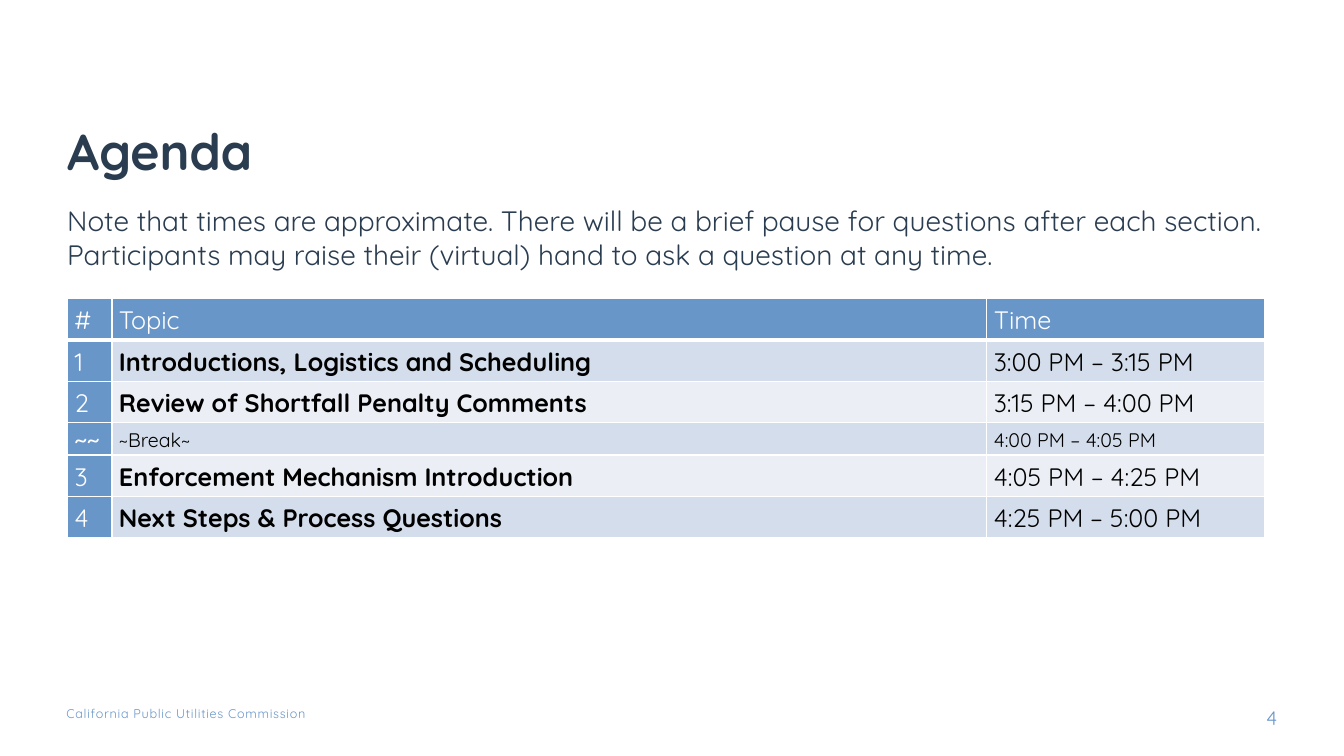
from dataclasses import dataclass

import lxml.etree
import pptx
import pptx.dml.color
import pptx.enum.text
import pptx.oxml.ns
import pptx.util

RGBColor = pptx.dml.color.RGBColor
Anchor = pptx.enum.text.MSO_ANCHOR
Align = pptx.enum.text.PP_ALIGN

NAVY = RGBColor(0x2A, 0x3C, 0x50)
BLUE = RGBColor(0x69, 0x96, 0xC9)
BAND_DARK = RGBColor(0xD4, 0xDD, 0xEB)
BAND_LIGHT = RGBColor(0xEB, 0xEF, 0xF5)
WHITE = RGBColor(0xFF, 0xFF, 0xFF)
BLACK = RGBColor(0x00, 0x00, 0x00)

FONT = "Quicksand"
SLIDE_WIDTH = pptx.util.Inches(13.333)
SLIDE_HEIGHT = pptx.util.Inches(7.5)

# Shares of the slide's width and height, in percent
COLUMN_SHARES = (3.3, 65.1, 20.7)
ROW_SHARE = 5.47
BREAK_ROW_SHARE = 3.2


@dataclass(frozen=True)
class Box:
    """A place on the slide, in percent of its width and height."""
    left: float
    top: float
    width: float
    height: float

    def lengths(self) -> tuple[int, int, int, int]:
        return (across(self.left), down(self.top),
                across(self.width), down(self.height))


@dataclass(frozen=True)
class AgendaItem:
    number: str
    topic: str
    time: str
    is_break: bool = False


TITLE_BOX = Box(5, 5.33, 90, 19.33)
NOTE_BOX = Box(5, 26.27, 90.9, 11.33)
TABLE_BOX = Box(5.03, 39.5, sum(COLUMN_SHARES), 31.33)
FOOTER_BOX = Box(4.95, 93.33, 24.1, 2)
NUMBER_BOX = Box(91.88, 93.33, 3.15, 2.67)

NOTE = ("Note that times are approximate. There will be a brief pause for "
        "questions after each section. Participants may raise their (virtual) "
        "hand to ask a question at any time.")
HEADINGS = ("#", "Topic", "Time")
AGENDA = (
    AgendaItem("1", "Introductions, Logistics and Scheduling", "3:00 PM – 3:15 PM"),
    AgendaItem("2", "Review of Shortfall Penalty Comments", "3:15 PM – 4:00 PM"),
    AgendaItem("~~", "~Break~", "4:00 PM – 4:05 PM", is_break=True),
    AgendaItem("3", "Enforcement Mechanism Introduction", "4:05 PM – 4:25 PM"),
    AgendaItem("4", "Next Steps & Process Questions", "4:25 PM – 5:00 PM"),
)


def across(percent: float) -> int:
    return round(SLIDE_WIDTH * percent / 100)


def down(percent: float) -> int:
    return round(SLIDE_HEIGHT * percent / 100)


def write(frame, text: str, *, size: float, color: RGBColor, font: str = FONT,
          bold: bool = False, align=Align.LEFT, line_spacing: float = 1.0,
          letter_spacing: float = 0) -> None:
    """Put one formatted paragraph in a text frame."""
    paragraph = frame.paragraphs[0]
    paragraph.alignment = align
    paragraph.line_spacing = line_spacing
    run = paragraph.add_run()
    run.text = text
    run.font.name = font
    run.font.size = pptx.util.Pt(size)
    run.font.bold = bold
    run.font.color.rgb = color
    if letter_spacing:
        run.font._element.set("spc", str(round(letter_spacing * 100)))


def add_text(slide, box: Box, text: str, *, anchor=Anchor.TOP,
             padded: bool = False, **text_format) -> None:
    frame = slide.shapes.add_textbox(*box.lengths()).text_frame
    frame.word_wrap = True
    frame.vertical_anchor = anchor
    frame.margin_left = 0
    frame.margin_right = pptx.util.Inches(0.1 if padded else 0)
    frame.margin_top = frame.margin_bottom = pptx.util.Inches(0.05 if padded else 0)
    write(frame, text, **text_format)


def add_borders(cell, *, top: float, bottom: float) -> None:
    """Draw white borders; top and bottom are widths in points."""
    properties = cell._tc.get_or_add_tcPr()
    for edge, width in (("L", 1), ("R", 1), ("T", top), ("B", bottom)):
        line = lxml.etree.SubElement(
            properties, pptx.oxml.ns.qn(f"a:ln{edge}"), w=str(pptx.util.Pt(width)))
        fill = lxml.etree.SubElement(line, pptx.oxml.ns.qn("a:solidFill"))
        lxml.etree.SubElement(fill, pptx.oxml.ns.qn("a:srgbClr"), val=str(WHITE))


def fill_cell(cell, text: str, row: int, fill: RGBColor, **text_format) -> None:
    cell.margin_left = cell.margin_right = pptx.util.Inches(0.07)
    cell.margin_top = cell.margin_bottom = 0
    cell.vertical_anchor = Anchor.MIDDLE
    add_borders(cell, top=3 if row == 1 else 1, bottom=3 if row == 0 else 1)
    cell.fill.solid()
    cell.fill.fore_color.rgb = fill
    write(cell.text_frame, text, line_spacing=1.07, **text_format)


def add_agenda_table(slide) -> None:
    table = slide.shapes.add_table(
        len(AGENDA) + 1, len(HEADINGS), *TABLE_BOX.lengths()).table
    for column, share in zip(table.columns, COLUMN_SHARES):
        column.width = across(share)
    table.rows[0].height = down(ROW_SHARE)
    for column, heading in enumerate(HEADINGS):
        fill_cell(table.cell(0, column), heading, 0, BLUE, size=18, color=WHITE)
    for row, item in enumerate(AGENDA, start=1):
        table.rows[row].height = down(BREAK_ROW_SHARE if item.is_break else ROW_SHARE)
        band = BAND_DARK if row % 2 else BAND_LIGHT
        size = 14 if item.is_break else 18
        fill_cell(table.cell(row, 0), item.number, row, BLUE, size=18, color=WHITE,
                  font="Calibri" if item.is_break else FONT)
        fill_cell(table.cell(row, 1), item.topic, row, band, size=size, color=BLACK,
                  bold=not item.is_break)
        fill_cell(table.cell(row, 2), item.time, row, band, size=size, color=BLACK)


def main() -> None:
    presentation = pptx.Presentation()
    presentation.slide_width = SLIDE_WIDTH
    presentation.slide_height = SLIDE_HEIGHT
    slide = presentation.slides.add_slide(presentation.slide_layouts[6])
    add_text(slide, FOOTER_BOX, "California Public Utilities Commission",
             size=9, color=BLUE, letter_spacing=0.5)
    add_text(slide, TITLE_BOX, "Agenda", anchor=Anchor.BOTTOM, padded=True,
             size=36, color=NAVY, bold=True, line_spacing=0.9)
    add_text(slide, NUMBER_BOX, "4", size=14, color=BLUE, align=Align.RIGHT)
    add_agenda_table(slide)
    add_text(slide, NOTE_BOX, NOTE, padded=True, size=20, color=NAVY)
    presentation.save("out.pptx")


if __name__ == "__main__":
    main()
